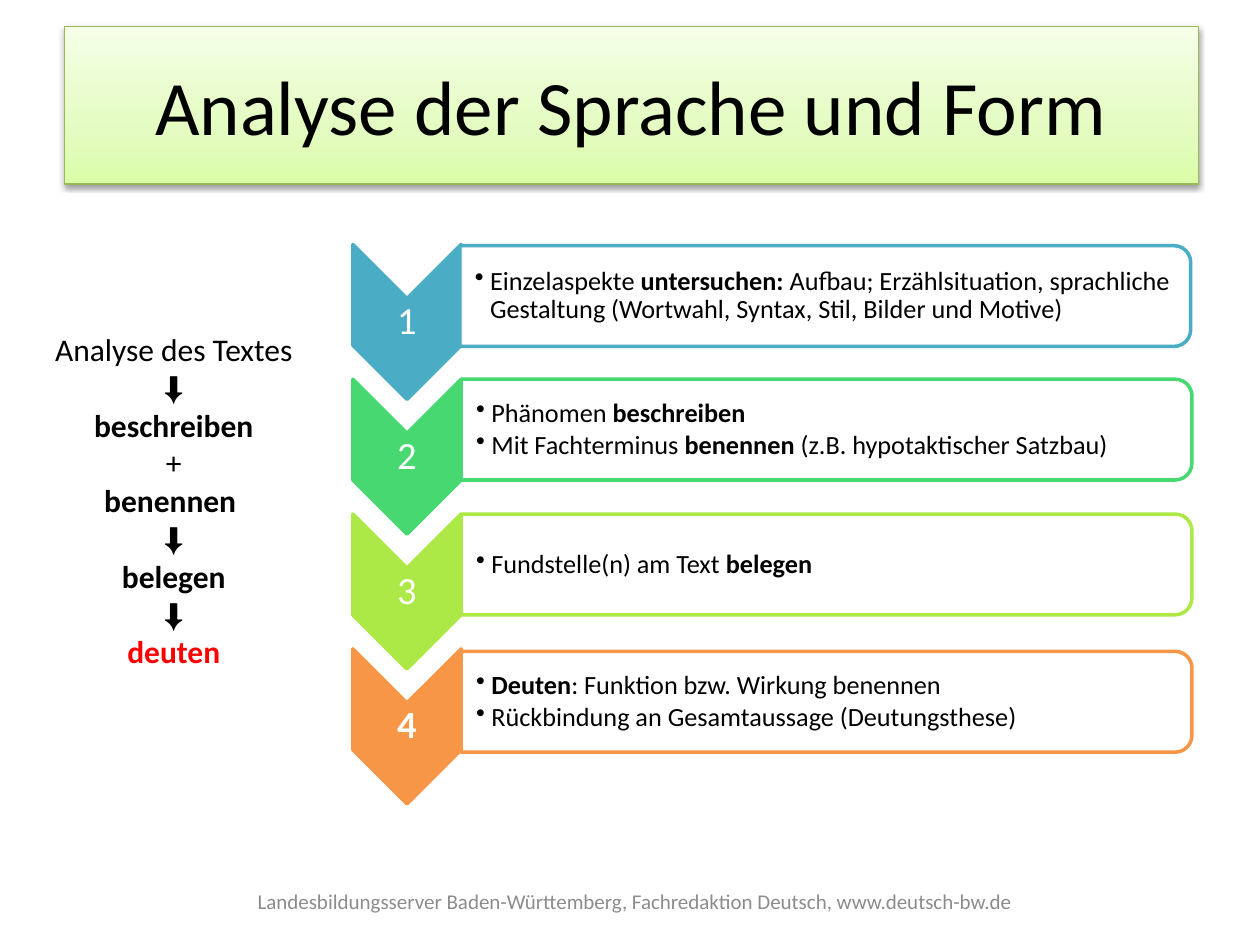
import pptx
import pptx.util
import pptx.dml.color
import pptx.enum.shapes
import pptx.enum.text
import pptx.oxml
import pptx.oxml.ns

Inches, Pt = pptx.util.Inches, pptx.util.Pt
Shape = pptx.enum.shapes.MSO_SHAPE
Align = pptx.enum.text.PP_ALIGN
Anchor = pptx.enum.text.MSO_ANCHOR

FONT = "Calibri"
HUES = {
    "black": "000000", "white": "FFFFFF", "gray": "8C8C8C", "red": "FF0000",
    "teal": "4BACC6", "green": "47D872", "lime": "ACE946", "orange": "F79646",
    "edge": "98B955",
}
FADE = [(0, "DAFDA7"), (35, "E4FCC2"), (100, "F5FFE7")]

TITLE = "Analyse der Sprache und Form"
FOOTER = "Landesbildungsserver Baden-Württemberg, Fachredaktion Deutsch, www.deutsch-bw.de"
PATH = [
    ("Analyse des Textes", "black"), ("⬇", "black"), ("*beschreiben*", "black"),
    ("+", "black"), ("*benennen *", "black"), ("⬇", "black"),
    ("*belegen*", "black"), ("⬇", "black"), ("*deuten*", "red"),
]
STEPS = [
    ("1", "teal", 3.65, 1.95, [
        "Einzelaspekte *untersuchen: *Aufbau; Erzählsituation, sprachliche "
        "Gestaltung (Wortwahl, Syntax, Stil, Bilder und Motive)"]),
    ("2", "green", 3.66, 3.01, [
        "Phänomen *beschreiben*",
        "Mit Fachterminus *benennen *(z.B. hypotaktischer Satzbau)"]),
    ("3", "lime", 3.66, 4.08, ["Fundstelle(n) am Text *belegen*"]),
    ("*4*", "orange", 3.66, 5.17, [
        "*Deuten*: Funktion bzw. Wirkung benennen",
        "Rückbindung an Gesamtaussage (Deutungsthese)"]),
]
TOP, PITCH = 1.94, 1.07
TIP_W, TIP_H = 0.86, 1.23
BAR_W, BAR_H = 5.8, 0.8


def rgb(hue):
    return pptx.dml.color.RGBColor.from_string(HUES[hue])


def node(text):
    space = pptx.oxml.ns.nsdecls("a")
    return pptx.oxml.parse_xml(f"<a:root {space}>{text}</a:root>")[0]


def place(shape, left, top, wide, high):
    shape.left, shape.top = Inches(left), Inches(top)
    shape.width, shape.height = Inches(wide), Inches(high)


def write(frame, lines, size, align=Align.CENTER, after=0, tight=False):
    for i, (text, hue) in enumerate(lines):
        para = frame.paragraphs[0] if i == 0 else frame.add_paragraph()
        para.alignment = align
        para.font.size, para.font.name = Pt(size), FONT
        para.font.color.rgb = rgb(hue)
        if tight:
            para.line_spacing = 0.9
            para.space_after = Pt(after)
        for j, part in enumerate(text.split("*")):
            if part:
                run = para.add_run()
                run.text = part
                if j % 2:
                    run.font.bold = True


def add_text(slide, box, lines, size, anchor=Anchor.MIDDLE, pad=None, **style):
    shape = slide.shapes.add_textbox(*map(Inches, box))
    frame = shape.text_frame
    frame.word_wrap = True
    frame.vertical_anchor = anchor
    if pad:
        (frame.margin_left, frame.margin_top,
         frame.margin_right, frame.margin_bottom) = map(Inches, pad)
    write(frame, lines, size, **style)
    return frame


def add_turned(slide, kind, left, top, wide, high, fill, line):
    shift = (wide - high) / 2
    shape = slide.shapes.add_shape(
        kind, *map(Inches, (left + shift, top - shift, high, wide)))
    shape.rotation = 90
    shape.shadow.inherit = False
    shape.fill.solid()
    shape.fill.fore_color.rgb = rgb(fill)
    shape.line.color.rgb = rgb(line)
    shape.line.width = Pt(2)
    return shape


def add_title(slide):
    shape = slide.shapes.title
    place(shape, 0.51, 0.21, 9, 1.25)
    shape.text_frame.vertical_anchor = Anchor.MIDDLE
    write(shape.text_frame, [(TITLE, "black")], 44)
    shape.line.color.rgb = rgb("edge")
    shape.line.width = Pt(0.75)
    stops = "".join(f'<a:gs pos="{pos * 1000}"><a:srgbClr val="{hue}"/></a:gs>'
                    for pos, hue in FADE)
    props = shape._element.spPr
    props.find(pptx.oxml.ns.qn("a:ln")).addprevious(node(
        f'<a:gradFill rotWithShape="1"><a:gsLst>{stops}</a:gsLst>'
        '<a:lin ang="16200000" scaled="0"/></a:gradFill>'))
    props.append(node(
        '<a:effectLst><a:outerShdw blurRad="39370" dist="20320" dir="5400000" '
        'rotWithShape="0"><a:srgbClr val="000000"><a:alpha val="38000"/>'
        '</a:srgbClr></a:outerShdw></a:effectLst>'))


def add_step(slide, row, label, hue, left, top, lines):
    tip = TOP + row * PITCH
    add_turned(slide, Shape.CHEVRON, 2.8, tip, TIP_W, TIP_H, hue, hue)
    add_text(slide, (2.8, tip + 0.43, TIP_W, 0.37), [(label, "white")], 22,
             pad=(0.02,) * 4, after=7.7, tight=True)
    bar = add_turned(slide, Shape.ROUND_2_SAME_RECTANGLE,
                     left, top, BAR_W, BAR_H, "white", hue)
    color = bar._element.spPr.find(".//" + pptx.oxml.ns.qn("a:srgbClr"))
    color.append(node('<a:alpha val="90000"/>'))
    frame = add_text(slide, (left, top + 0.04, 5.76, 0.72),
                     [(text, "black") for text in lines], 15,
                     pad=(0.12, 0.01, 0.01, 0.01), align=Align.LEFT,
                     after=2.25, tight=True)
    for para in frame.paragraphs:
        props = para._p.get_or_add_pPr()
        props.set("marL", str(Inches(0.12)))
        props.set("indent", str(-Inches(0.12)))
        props.find(pptx.oxml.ns.qn("a:defRPr")).addprevious(
            node('<a:buChar char="•"/>'))


def main():
    deck = pptx.Presentation()
    deck.slide_width, deck.slide_height = Inches(10), Inches(7.5)
    slide = deck.slides.add_slide(deck.slide_layouts[5])
    add_title(slide)
    add_text(slide, (1.38, 6.95, 7.32, 0.4), [(FOOTER, "gray")], 12)
    add_text(slide, (0, 2.57, 2.76, 2.83), PATH, 18, anchor=Anchor.TOP)
    for row, step in enumerate(STEPS):
        add_step(slide, row, *step)
    deck.save("out.pptx")


if __name__ == "__main__":
    main()
